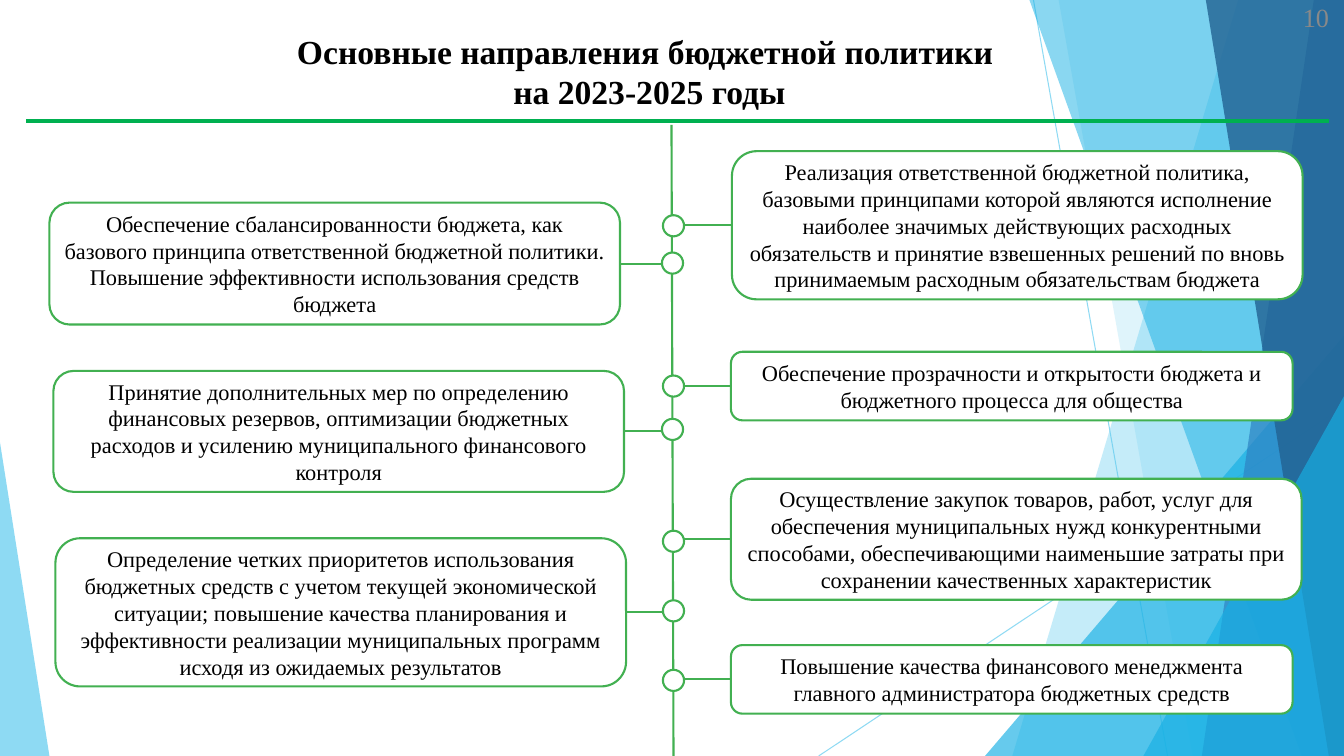
from dataclasses import dataclass

from lxml.etree import SubElement
from pptx import Presentation
from pptx.dml.color import RGBColor
from pptx.enum.shapes import MSO_CONNECTOR, MSO_SHAPE
from pptx.enum.text import MSO_ANCHOR, MSO_AUTO_SIZE, PP_ALIGN
from pptx.oxml.ns import qn
from pptx.util import Inches, Pt


@dataclass(frozen=True)
class Theme:
    font: str = "Times New Roman"
    ink: str = "000000"
    paper: str = "FFFFFF"
    muted: str = "898989"
    rule: str = "00B050"
    branch: str = "42B051"
    sky: str = "5FCBEF"
    cyan: str = "17B0E4"
    blue: str = "2E83C3"
    navy: str = "226292"
    title_size: float = 24
    number_size: float = 18.7
    card_size: float = 16
    rule_width: float = 3.5
    branch_width: float = 1.5
    hairline: float = 0.75


THEME = Theme()
WIDTH, HEIGHT = 13.33, 7.5
NODE_SIZE = 0.21
LEFT_SIDE, RIGHT_SIDE = 1, 3

# Card box, side facing the spine, centre of its node, text
CARDS = [
    ((0.49, 2.01, 5.66, 1.21), RIGHT_SIDE, (6.67, 2.61),
     "Обеспечение сбалансированности бюджета, как базового принципа ответственной "
     "бюджетной политики. Повышение эффективности использования средств бюджета"),
    ((0.53, 3.68, 5.66, 1.2), RIGHT_SIDE, (6.67, 4.26),
     "Принятие дополнительных мер по определению финансовых резервов, оптимизации "
     "бюджетных расходов и усилению муниципального финансового контроля"),
    ((0.55, 5.34, 5.66, 1.47), RIGHT_SIDE, (6.68, 6.06),
     "Определение четких приоритетов использования бюджетных средств с учетом текущей "
     "экономической ситуации; повышение качества планирования и эффективности "
     "реализации муниципальных программ исходя из ожидаемых результатов"),
    ((7.26, 1.5, 5.66, 1.47), LEFT_SIDE, (6.68, 2.24),
     "Реализация ответственной бюджетной политика, базовыми принципами которой являются "
     "исполнение наиболее значимых действующих расходных обязательств и принятие "
     "взвешенных решений по вновь принимаемым расходным обязательствам бюджета"),
    ((7.25, 3.49, 5.57, 0.68), LEFT_SIDE, (6.68, 3.83),
     "Обеспечение прозрачности и открытости бюджета и бюджетного процесса для общества"),
    ((7.25, 4.75, 5.66, 1.2), LEFT_SIDE, (6.68, 5.37),
     "Осуществление закупок товаров, работ, услуг для обеспечения муниципальных нужд "
     "конкурентными способами, обеспечивающими наименьшие затраты при сохранении "
     "качественных характеристик"),
    ((7.25, 6.4, 5.57, 0.68), LEFT_SIDE, (6.68, 6.75),
     "Повышение качества финансового менеджмента главного администратора "
     "бюджетных средств"),
]


def inches(values):
    return [Inches(value) for value in values]


def paint(fill, color, opacity=100):
    fill.solid()
    fill.fore_color.rgb = RGBColor.from_string(color)
    if opacity < 100:
        for tint in fill._xPr.iter(qn("a:srgbClr")):
            SubElement(tint, qn("a:alpha"), val=str(opacity * 1000))


def draw_line(page, start, end, color, width, opacity=100):
    line = page.shapes.add_connector(MSO_CONNECTOR.STRAIGHT, *inches(start + end))
    line.line.width = Pt(width)
    paint(line.line.fill, color, opacity)
    SubElement(line._element.spPr, qn("a:effectLst"))
    return line


def draw_shape(page, kind, box, line_color=None, fill_color=THEME.paper, opacity=100):
    shape = page.shapes.add_shape(kind, *inches(box))
    shape.shadow.inherit = False
    paint(shape.fill, fill_color, opacity)
    if line_color:
        shape.line.width = Pt(THEME.branch_width)
        paint(shape.line.fill, line_color)
    else:
        shape.line.fill.background()
    return shape


def write(shape, text, size, align, color=THEME.ink, bold=False):
    frame = shape.text_frame
    frame.word_wrap = True
    frame.auto_size = MSO_AUTO_SIZE.NONE
    frame.vertical_anchor = MSO_ANCHOR.MIDDLE
    para = frame.paragraphs[0]
    para.text = text
    para.alignment = align
    para.font.name = THEME.font
    para.font.size = Pt(size)
    para.font.bold = bold
    para.font.color.rgb = RGBColor.from_string(color)


def draw_band(page, top_left, top_right, bottom_left, color, opacity):
    """Slanted band from a top edge down to the slide's right-hand corner."""
    builder = page.shapes.build_freeform(Inches(top_left), 0)
    corners = [(top_right, 0), (top_right, HEIGHT), (bottom_left, HEIGHT)]
    builder.add_line_segments([inches(corner) for corner in corners], close=True)
    band = builder.convert_to_shape()
    band.shadow.inherit = False
    band.line.fill.background()
    paint(band.fill, color, opacity)


def draw_wedge(page, box, apex, color, opacity):
    wedge = draw_shape(page, MSO_SHAPE.ISOSCELES_TRIANGLE, box,
                       fill_color=color, opacity=opacity)
    wedge.adjustments[0] = apex


def draw_backdrop(page, right, bottom):
    for start, end in [((10.25, 0), (11.58, bottom)), ((right, 4.03), (8.12, bottom))]:
        draw_line(page, start, end, THEME.sky, THEME.hairline, 70)
    draw_band(page, 12.28, right, 10.04, THEME.sky, 36)
    draw_band(page, 10.5, right, 11.83, THEME.sky, 20)
    draw_wedge(page, (right - 3.56, bottom - 4.17, 3.56, 4.17), 1, THEME.cyan, 66)
    draw_band(page, 10.21, right, 12.91, THEME.cyan, 50)
    draw_band(page, 13.03, right, 11.92, THEME.blue, 70)
    draw_band(page, 11.96, right, 13.18, THEME.navy, 80)
    draw_wedge(page, (right - 1.99, bottom - 3.57, 1.99, 3.57), 1, THEME.cyan, 66)
    draw_wedge(page, (0, bottom - 3.11, 0.49, 3.11), 0, THEME.sky, 70)


def draw_header(page, left, top, width, height):
    title = page.shapes.title
    title.left, title.top, title.width, title.height = inches((left, top, width, height))
    write(title, "Основные направления бюджетной политики \vна 2023-2025 годы",
          THEME.title_size, PP_ALIGN.CENTER, bold=True)
    rule_y = top + height - 0.03
    draw_line(page, (left - 0.18, rule_y), (left + width + 0.74, rule_y),
              THEME.rule, THEME.rule_width)
    number = page.shapes.add_textbox(*inches((left + width + 0.21, top - 0.21, 0.63, 0.4)))
    write(number, "10", THEME.number_size, PP_ALIGN.RIGHT, THEME.muted)


def draw_card(page, box, side, node, text):
    """Card joined to its node on the spine."""
    card = draw_shape(page, MSO_SHAPE.ROUNDED_RECTANGLE, box, THEME.branch)
    write(card, text, THEME.card_size, PP_ALIGN.CENTER)
    frame = card.text_frame
    frame.margin_left = frame.margin_right = Inches(0.08)
    frame.margin_top = frame.margin_bottom = Inches(0.13)
    node_x, node_y = node
    middle = box[1] + box[3] / 2
    branch = draw_line(page, (node_x, middle), (node_x, middle),
                       THEME.branch, THEME.branch_width)
    branch.begin_connect(card, side)
    radius = NODE_SIZE / 2
    draw_shape(page, MSO_SHAPE.OVAL,
               (node_x - radius, node_y - radius, NODE_SIZE, NODE_SIZE), THEME.branch)


def main():
    deck = Presentation()
    deck.slide_width, deck.slide_height = inches((WIDTH, HEIGHT))
    page = deck.slides.add_slide(deck.slide_layouts[5])
    draw_backdrop(page, WIDTH, HEIGHT)
    draw_header(page, 0.44, 0.18, 12, 1.05)
    draw_line(page, (6.66, 1.24), (6.68, HEIGHT), THEME.branch, THEME.branch_width)
    for card in CARDS:
        draw_card(page, *card)
    deck.save("out.pptx")


if __name__ == "__main__":
    main()
